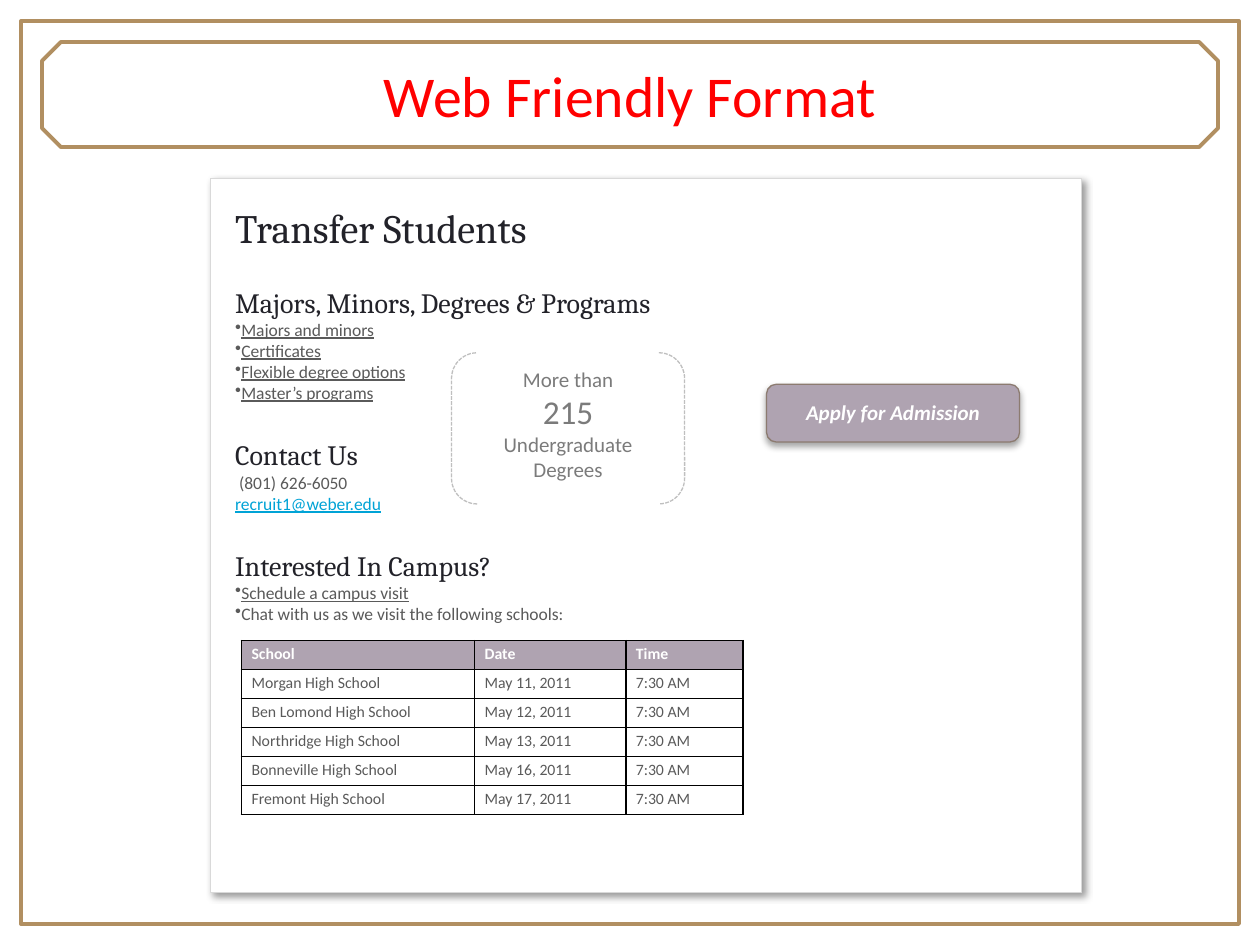
from collections import namedtuple

from lxml import etree
from pptx import Presentation
from pptx import util as u
from pptx.dml.color import RGBColor
from pptx.enum import dml, shapes, text
from pptx.oxml import ns

Box = namedtuple("Box", "col row cols rows")
CELL = u.Inches(10) / 120
COLORS = {
    "gold": "B18F61", "white": "FFFFFF", "red": "FF0000", "ink": "222229",
    "body": "5A5A5A", "link": "00A3D6", "mauve": "AFA3B1", "brown": "8C7B70",
    "pale": "D9D9D9", "silver": "BFBFBF", "gray": "7B7B7B", "black": "000000",
}
SECTIONS = [
    ("Majors, Minors, Degrees & Programs", 19,
     ["Majors and minors", "Certificates", "Flexible degree options", "Master’s programs"]),
    ("Contact Us", 20, []),
    ("Interested In Campus?", 20,
     ["Schedule a campus visit", "Chat with us as we visit the following schools:"]),
]
PLAIN_ITEM = "Chat with us as we visit the following schools:"
VISITS = [
    ("Morgan High School", "May 11, 2011"),
    ("Ben Lomond High School", "May 12, 2011"),
    ("Northridge High School", "May 13, 2011"),
    ("Bonneville High School", "May 16, 2011"),
    ("Fremont High School", "May 17, 2011"),
]


def color(name):
    return RGBColor.from_string(COLORS[name])


def within(box, col, row, cols, rows):
    return Box(box.col + col, box.row + row, cols, rows)


def lengths(box):
    return [round(value * CELL) for value in box]


def add_child(parent, tag, **attributes):
    return etree.SubElement(parent, ns.qn(tag), attributes)


def style(font, size, name, face="Calibri", bold=False, italic=False, underline=False):
    font.size, font.name = u.Pt(size), face
    font.bold, font.italic, font.underline = bold, italic, underline
    font.color.rgb = color(name)


def add_shape(page, kind, box, line, weight, fill=None):
    shape = page.shapes.add_shape(kind, *lengths(box))
    shape.shadow.inherit = False
    shape.line.color.rgb = color(line)
    shape.line.width = u.Pt(weight)
    if fill:
        shape.fill.solid()
        shape.fill.fore_color.rgb = color(fill)
    else:
        shape.fill.background()
    return shape


def add_shadow(shape, opacity, distance, angle):
    effects = shape.element.spPr.find(ns.qn("a:effectLst"))
    shadow = add_child(effects, "a:outerShdw", blurRad=str(u.Pt(4)),
                       dist=str(u.Pt(distance)), dir=str(angle * 60000),
                       algn="tl", rotWithShape="0")
    tone = add_child(shadow, "a:srgbClr", val=COLORS["black"])
    add_child(tone, "a:alpha", val=str(opacity * 1000))


def set_frame(shape, left, top, right, bottom, anchor=text.MSO_ANCHOR.TOP):
    frame = shape.text_frame
    frame.word_wrap = True
    frame.auto_size = text.MSO_AUTO_SIZE.NONE
    frame.vertical_anchor = anchor
    frame.margin_left, frame.margin_top = u.Inches(left), u.Inches(top)
    frame.margin_right, frame.margin_bottom = u.Inches(right), u.Inches(bottom)
    return frame


def add_title(page, box):
    octagon = add_shape(page, shapes.MSO_SHAPE.OCTAGON, box, "gold", 2.25, "white")
    octagon.adjustments[0] = 0.18
    title = page.shapes.title
    title.left, title.top, title.width, title.height = lengths(box)
    octagon.element.addnext(title.element)
    frame = set_frame(title, 0.1, 0.05, 0.1, 0.05, text.MSO_ANCHOR.MIDDLE)
    frame.text = "Web Friendly Format"
    frame.paragraphs[0].alignment = text.PP_ALIGN.CENTER
    style(frame.paragraphs[0].runs[0].font, 33, "red")


def add_line(frame, words, size, name, face="Calibri", before=0, bullet=False, underline=False):
    para = frame.add_paragraph() if frame.text else frame.paragraphs[0]
    para.text = words
    para.alignment = text.PP_ALIGN.LEFT
    if before:
        para.space_before = u.Pt(before)
    if bullet:
        add_child(para._p.get_or_add_pPr(), "a:buChar", char="•")
    for span in para.runs:
        style(span.font, size, name, face, underline=underline)
    return para


def add_panel(page, box):
    panel = add_shape(page, shapes.MSO_SHAPE.RECTANGLE, box, "pale", 0.25, "white")
    add_shadow(panel, 40, 3, 45)
    frame = set_frame(panel, 0.2, 0.2, 0.1, 0.05)
    add_line(frame, "Transfer Students", 23, "ink", "Cambria")
    for heading, before, items in SECTIONS:
        add_line(frame, heading, 16, "ink", "Cambria", before)
        for item in items:
            add_line(frame, item, 10, "body", bullet=True, underline=item != PLAIN_ITEM)
        if heading == "Contact Us":
            para = add_line(frame, " (801) 626-6050\vrecruit1@weber.edu", 10, "body")
            style(para.runs[-1].font, 10, "link", underline=True)


def add_borders(cell):
    properties = cell._tc.get_or_add_tcPr()
    for index, side in enumerate(("a:lnL", "a:lnR", "a:lnT", "a:lnB")):
        line = etree.Element(ns.qn(side), w=str(u.Pt(1)))
        add_child(add_child(line, "a:solidFill"), "a:srgbClr", val=COLORS["black"])
        properties.insert(index, line)


def add_visits(page, box):
    rows = [("School", "Date", "Time")] + [visit + ("7:30 AM",) for visit in VISITS]
    table = page.shapes.add_table(len(rows), 3, *lengths(box)).table
    table.horz_banding = False
    for column, width in zip(table.columns, (1.85, 1.2, 0.93)):
        column.width = u.Inches(width)
    for row, values in enumerate(rows):
        for column, value in enumerate(values):
            cell = table.cell(row, column)
            cell.text = value
            cell.margin_left = cell.margin_right = u.Inches(0.08)
            cell.margin_top = cell.margin_bottom = 0
            para = cell.text_frame.paragraphs[0]
            para.line_spacing = 1.2
            style(para.runs[0].font, 9, "body" if row else "white", bold=row == 0)
            if row:
                cell.fill.background()
            else:
                cell.fill.solid()
                cell.fill.fore_color.rgb = color("mauve")
            add_borders(cell)


def add_button(page, box):
    button = add_shape(page, shapes.MSO_SHAPE.FLOWCHART_ALTERNATE_PROCESS,
                       box, "brown", 0.75, "mauve")
    add_shadow(button, 35, 2, 90)
    para = add_line(set_frame(button, 0, 0.1, 0, 0), "Apply for Admission", 12, "white")
    para.alignment = text.PP_ALIGN.CENTER
    style(para.runs[0].font, 12, "white", bold=True, italic=True)


def add_fact(page, box):
    fact = add_shape(page, shapes.MSO_SHAPE.DOUBLE_BRACKET, box, "silver", 0.75, "white")
    fact.adjustments[0] = 0.17
    fact.line.dash_style = dml.MSO_LINE.SQUARE_DOT
    frame = set_frame(fact, 0.1, 0.05, 0.1, 0.05)
    for words, size in (("More than", 12), ("215", 19), ("Undergraduate Degrees", 12)):
        add_line(frame, words, size, "gray").alignment = text.PP_ALIGN.CENTER


def main():
    deck = Presentation()
    deck.slide_width, deck.slide_height = u.Inches(10), u.Inches(7.5)
    page = deck.slides.add_slide(deck.slide_layouts[5])
    add_shape(page, shapes.MSO_SHAPE.RECTANGLE, Box(2, 2, 116, 86), "gold", 2.25)
    add_title(page, Box(4, 4, 112, 10))
    panel = Box(20, 17, 83, 68)
    add_panel(page, panel)
    add_visits(page, within(panel, 3, 44, 47.8, 16.6))
    add_button(page, within(panel, 53, 19.6, 24.1, 5.5))
    add_fact(page, within(panel, 23, 16.6, 22.2, 14.4))
    deck.save("out.pptx")


if __name__ == "__main__":
    main()
